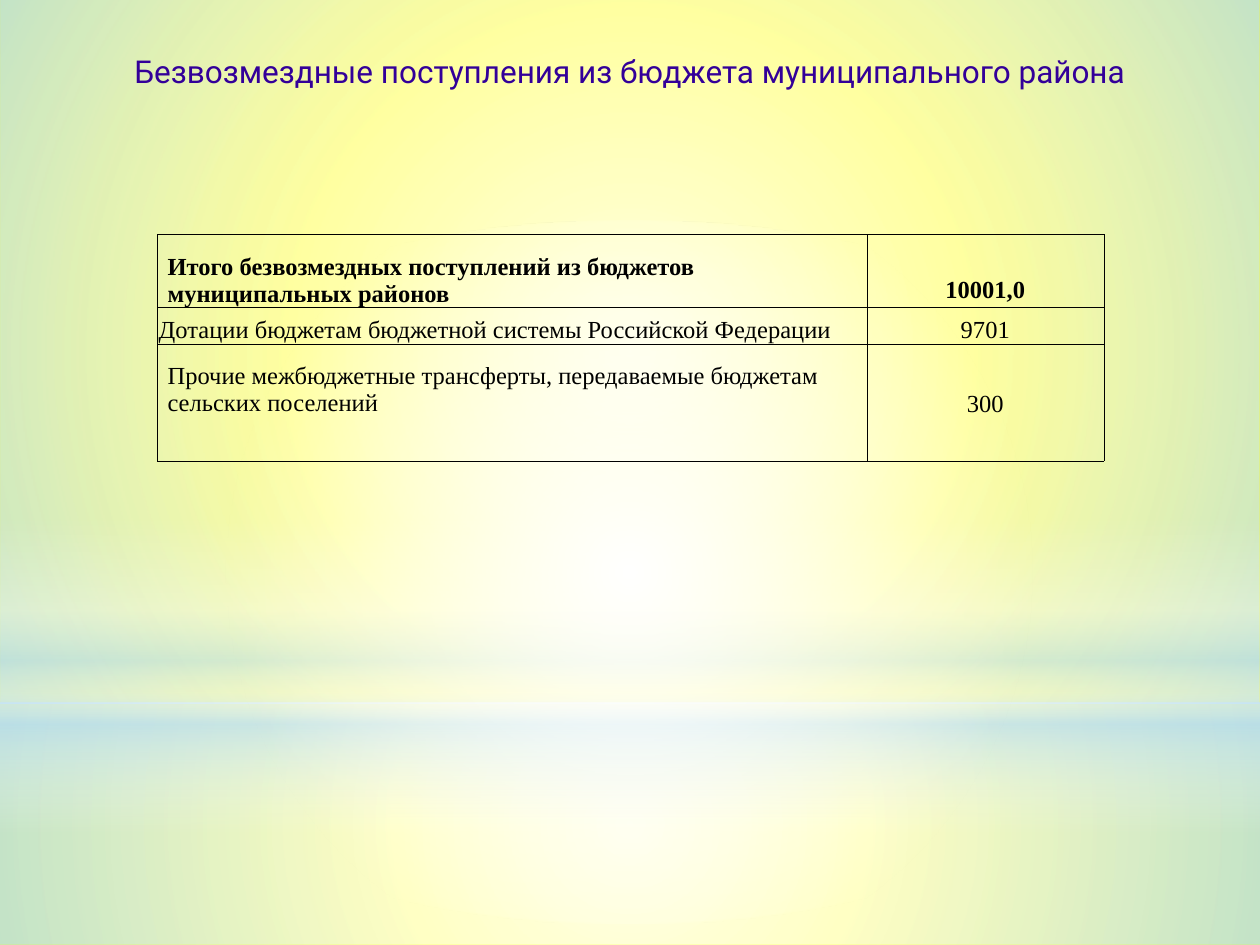
from dataclasses import dataclass

from lxml.etree import SubElement
from pptx import Presentation
from pptx.dml.color import RGBColor
from pptx.enum.shapes import MSO_SHAPE
from pptx.enum.text import MSO_ANCHOR, PP_ALIGN
from pptx.oxml.ns import qn
from pptx.util import Inches, Pt

YELLOW = RGBColor(0xFF, 0xFF, 0x00)
WHITE = RGBColor(0xFF, 0xFF, 0xFF)
SKY = RGBColor(0xB4, 0xDC, 0xFA)
VIOLET = RGBColor(0x33, 0x00, 0x99)
BLACK = RGBColor(0x00, 0x00, 0x00)


@dataclass(frozen=True)
class Stop:
    position: int
    color: RGBColor
    opacity: int


@dataclass(frozen=True)
class Glow:
    top: float
    height: float
    stops: tuple[Stop, ...]
    outline: MSO_SHAPE = MSO_SHAPE.RECTANGLE
    radial: bool = True


@dataclass(frozen=True)
class BudgetRow:
    label: str
    amount: str
    height: float
    side_margin: float
    label_margin: float
    amount_margin: float
    label_anchor: MSO_ANCHOR
    amount_anchor: MSO_ANCHOR
    bold: bool = False


GLOWS = (
    Glow(5.58, 1.92, (Stop(0, WHITE, 91), Stop(37, WHITE, 76), Stop(100, SKY, 79))),
    Glow(0, 5.58, (Stop(0, WHITE, 89), Stop(48, WHITE, 62), Stop(100, SKY, 79))),
    Glow(4.12, 2.5, (Stop(0, WHITE, 0), Stop(29, WHITE, 30), Stop(45, SKY, 40),
                     Stop(55, WHITE, 26), Stop(65, SKY, 60), Stop(100, WHITE, 0)),
         radial=False),
    Glow(1.75, 5.58, (Stop(0, WHITE, 100), Stop(56, WHITE, 0)), MSO_SHAPE.OVAL),
)

BUDGET_ROWS = (
    BudgetRow("Итого безвозмездных поступлений из бюджетов муниципальных районов",
              "10001,0", 0.58, 0.08, 0.11, 0.34,
              MSO_ANCHOR.BOTTOM, MSO_ANCHOR.TOP, True),
    BudgetRow("Дотации бюджетам бюджетной системы Российской Федерации",
              "9701", 0.29, 0.01, 0.01, 0.01,
              MSO_ANCHOR.BOTTOM, MSO_ANCHOR.BOTTOM),
    BudgetRow("Прочие межбюджетные трансферты, передаваемые бюджетам сельских поселений",
              "300", 0.93, 0.08, 0.15, 0.37,
              MSO_ANCHOR.TOP, MSO_ANCHOR.TOP),
)
COLUMN_WIDTHS = (5.63, 1.88)


def draw_glow(page, glow: Glow) -> None:
    shape = page.shapes.add_shape(glow.outline, Inches(0), Inches(glow.top),
                                  Inches(10), Inches(glow.height))
    shape.shadow.inherit = False
    shape.line.fill.background()
    shape.fill.background()
    properties = shape.element.spPr
    empty_fill = properties.find(qn("a:noFill"))
    gradient = SubElement(properties, qn("a:gradFill"), rotWithShape="1")
    properties.replace(empty_fill, gradient)
    stop_list = SubElement(gradient, qn("a:gsLst"))
    for stop in glow.stops:
        entry = SubElement(stop_list, qn("a:gs"), pos=str(stop.position * 1000))
        color = SubElement(entry, qn("a:srgbClr"), val=str(stop.color))
        SubElement(color, qn("a:alpha"), val=str(stop.opacity * 1000))
    if glow.radial:
        path = SubElement(gradient, qn("a:path"), path="circle")
        SubElement(path, qn("a:fillToRect"), l="50000", t="50000", r="50000", b="50000")
    else:
        SubElement(gradient, qn("a:lin"), ang="5400000", scaled="0")


def format_text(para, font_name: str, size: int, color: RGBColor, bold: bool = False) -> None:
    for span in para.runs:
        span.font.name = font_name
        span.font.size = Pt(size)
        span.font.color.rgb = color
        span.font.bold = bold


def draw_title(page) -> None:
    box = page.shapes.add_textbox(Inches(0), Inches(0.36), Inches(10), Inches(0.41))
    box.text_frame.word_wrap = True
    box.text_frame.text = "Безвозмездные поступления из бюджета муниципального района"
    para = box.text_frame.paragraphs[0]
    para.alignment = PP_ALIGN.CENTER
    format_text(para, "Roboto", 18, VIOLET)


def draw_borders(cell) -> None:
    properties = cell._tc.get_or_add_tcPr()
    for index, side in enumerate(("lnL", "lnR", "lnT", "lnB")):
        line = SubElement(properties, qn(f"a:{side}"), w=str(Pt(0.06)))
        properties.insert(index, line)
        fill = SubElement(line, qn("a:solidFill"))
        SubElement(fill, qn("a:srgbClr"), val=str(BLACK))


def fill_cell(cell, text: str, row: BudgetRow, top_margin: float,
              anchor: MSO_ANCHOR, alignment: PP_ALIGN) -> None:
    cell.fill.background()
    cell.margin_left = cell.margin_right = Inches(row.side_margin)
    cell.margin_top = Inches(top_margin)
    cell.margin_bottom = Inches(0)
    cell.vertical_anchor = anchor
    cell.text_frame.text = text
    para = cell.text_frame.paragraphs[0]
    para.alignment = alignment
    format_text(para, "Times New Roman", 14, BLACK, row.bold)
    draw_borders(cell)


def draw_budget_table(page) -> None:
    frame = page.shapes.add_table(len(BUDGET_ROWS), len(COLUMN_WIDTHS),
                                  Inches(1.25), Inches(1.86),
                                  Inches(sum(COLUMN_WIDTHS)),
                                  Inches(sum(row.height for row in BUDGET_ROWS)))
    table = frame.table
    table.first_row = False
    table.horz_banding = False
    for column, width in zip(table.columns, COLUMN_WIDTHS):
        column.width = Inches(width)
    for index, row in enumerate(BUDGET_ROWS):
        table.rows[index].height = Inches(row.height)
        fill_cell(table.cell(index, 0), row.label, row, row.label_margin,
                  row.label_anchor, PP_ALIGN.LEFT)
        fill_cell(table.cell(index, 1), row.amount, row, row.amount_margin,
                  row.amount_anchor, PP_ALIGN.CENTER)


def main() -> None:
    deck = Presentation()
    deck.slide_width = Inches(10)
    deck.slide_height = Inches(7.5)
    page = deck.slides.add_slide(deck.slide_layouts[6])
    page.background.fill.solid()
    page.background.fill.fore_color.rgb = YELLOW
    for glow in GLOWS:
        draw_glow(page, glow)
    draw_title(page)
    draw_budget_table(page)
    deck.save("out.pptx")


if __name__ == "__main__":
    main()
